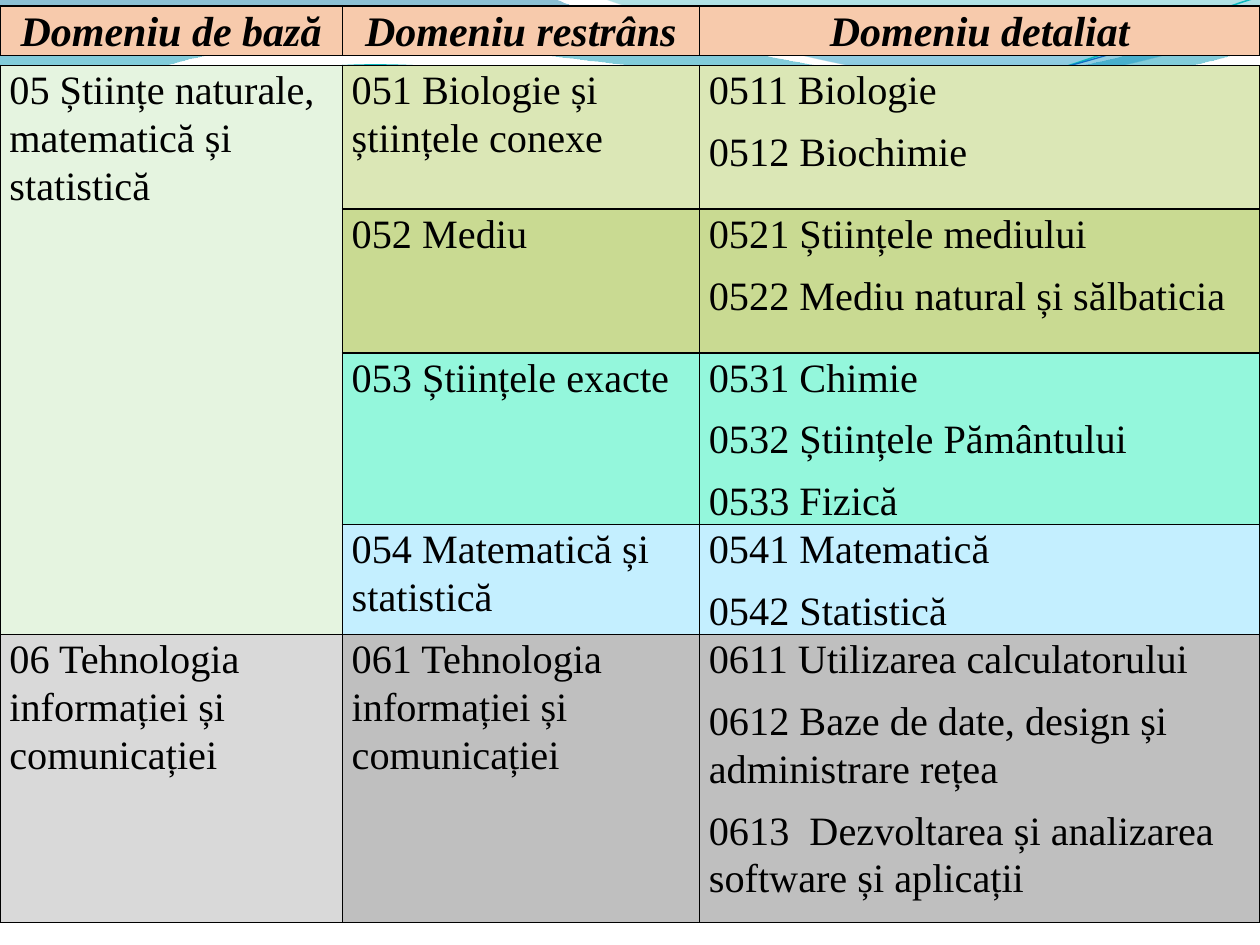
from lxml.etree import SubElement
from pptx import Presentation
from pptx.dml.color import RGBColor
from pptx.enum.text import MSO_ANCHOR, PP_ALIGN
from pptx.oxml.ns import qn
from pptx.util import Cm, Pt

FONT = "Times New Roman"
BLACK = RGBColor(0x00, 0x00, 0x00)
PEACH = RGBColor(0xF7, 0xCA, 0xAC)
MINT = RGBColor(0xE5, 0xF4, 0xE0)
LIME = RGBColor(0xDB, 0xE7, 0xB6)
OLIVE = RGBColor(0xC9, 0xDA, 0x92)
TURQUOISE = RGBColor(0x94, 0xF7, 0xDC)
SKY = RGBColor(0xC4, 0xEF, 0xFF)
LIGHT_GREY = RGBColor(0xD9, 0xD9, 0xD9)
GREY = RGBColor(0xBF, 0xBF, 0xBF)
DEEP_BLUE = RGBColor(0x00, 0x74, 0xA1)
CYAN = RGBColor(0x00, 0xC6, 0xCF)
TEAL = RGBColor(0x00, 0xA1, 0xA9)
BLUE = RGBColor(0x00, 0x8B, 0xBF)
LINE_TEAL = RGBColor(0x0A, 0xB8, 0xBF)
LINE_BLUE = RGBColor(0x0F, 0x6F, 0xC6)

COLUMN_WIDTHS = [6.9, 7.2, 11.3]
HEADINGS = ["Domeniu de bază", "Domeniu restrâns", "Domeniu detaliat"]
HEADER_ROW = (0.94, [([heading], PEACH, "LRTB") for heading in HEADINGS])

DOMAIN_ROWS = [
    (2.79, [
        (["05 Științe naturale, matematică și statistică"], MINT, "LRT"),
        (["051 Biologie și științele conexe"], LIME, "LRTB"),
        (["0511 Biologie", "0512 Biochimie"], LIME, "LRTB"),
    ]),
    (2.9, [
        ([], MINT, "LR"),
        (["052 Mediu"], OLIVE, "LRTB"),
        (["0521 Științele mediului", "0522 Mediu natural și sălbaticia"], OLIVE, "LRTB"),
    ]),
    (3.33, [
        ([], MINT, "LR"),
        (["053 Științele exacte"], TURQUOISE, "LRTB"),
        (["0531 Chimie", "0532 Științele Pământului", "0533 Fizică"], TURQUOISE, "LRTB"),
    ]),
    (2.08, [
        ([], MINT, "LRB"),
        (["054 Matematică și statistică"], SKY, "LRTB"),
        (["0541 Matematică", "0542 Statistică"], SKY, "LRTB"),
    ]),
    (5.81, [
        (["06 Tehnologia informației și comunicației"], LIGHT_GREY, "LRTB"),
        (["061 Tehnologia informației și comunicației"], GREY, "LRTB"),
        (["0611 Utilizarea calculatorului",
          "0612 Baze de date, design și administrare rețea",
          "0613  Dezvoltarea și analizarea software și aplicații"], GREY, "LRTB"),
    ]),
]

WAVES = [
    ([(0, 0), (4.4, -0.01), (4.76, 0.17, 6.64, 0.63, 7.58, 0.63),
      (8.53, 0.63, 9.58, 0.26, 10, 0.09), (10.01, 0.36),
      (9.83, 0.44, 8.7, 0.76, 7.46, 0.75), (6.22, 0.75, 3.82, 0.28, 2.57, 0.34),
      (1.29, 0.36, 0.46, 0.83, -0.01, 1.13)],
     [(0, DEEP_BLUE, 45), (1, CYAN, 55)]),
    ([(4.79, -0.01), (5.09, 0.11, 6.82, 0.62, 7.69, 0.65),
      (8.56, 0.69, 9.61, 0.32, 10, 0.21), (10, 0)],
     [(0, TEAL, 30), (0.8, BLUE, 45)]),
]
WAVE_LINES = [
    ([(0, 1.11), (0.48, 0.93, 1.58, 0.57, 2.77, 0.52),
      (3.95, 0.47, 5.93, 0.89, 7.13, 0.8), (8.33, 0.71, 9.38, 0.15, 9.98, -0.02)],
     LINE_TEAL, 0.85),
    ([(0, 1.04), (0.47, 0.96, 1.64, 0.61, 2.83, 0.56),
      (4.03, 0.51, 5.97, 0.84, 7.17, 0.75), (8.36, 0.67, 9.41, 0.21, 10, 0.06)],
     LINE_BLUE, 0.75),
]


def to_length(inches):
    return Cm(2.54 * inches)


def add_outline(slide, steps, close):
    anchors = [tuple(to_length(value) for value in step[-2:]) for step in steps]
    builder = slide.shapes.build_freeform(*anchors[0])
    builder.add_line_segments(anchors[1:], close=close)
    shape = builder.convert_to_shape()
    shape.shadow.inherit = False
    segments = list(shape._element.iter(qn("a:lnTo")))
    for segment, step in zip(segments, steps[1:]):
        if len(step) == 6:
            curve = segment.getparent().makeelement(qn("a:cubicBezTo"))
            for x, y in zip(step[::2], step[1::2]):
                SubElement(curve, qn("a:pt"), x=str(to_length(x) - shape.left),
                           y=str(to_length(y) - shape.top))
            segment.getparent().replace(segment, curve)
    return shape


def add_wave(slide, steps, stops):
    wave = add_outline(slide, steps, True)
    wave.line.fill.background()
    wave.fill.gradient()
    wave.fill.gradient_angle = 270
    for stop, (position, color, opacity) in zip(wave.fill.gradient_stops, stops):
        stop.position = position
        stop.color.rgb = color
    colors = wave._element.spPr.findall(".//" + qn("a:gs") + "/" + qn("a:srgbClr"))
    for element, (position, color, opacity) in zip(colors, stops):
        SubElement(element, qn("a:alpha"), val=str(opacity * 1000))


def add_wave_line(slide, steps, color, width):
    curve = add_outline(slide, steps, False)
    curve.fill.background()
    curve.line.color.rgb = color
    curve.line.width = Pt(width)


def set_borders(cell, sides):
    properties = cell._tc.get_or_add_tcPr()
    for side in "LRTB":
        border = SubElement(properties, qn("a:ln" + side), w=str(Pt(1)))
        if side in sides:
            fill = SubElement(border, qn("a:solidFill"))
            SubElement(fill, qn("a:srgbClr"), val=str(BLACK))
        else:
            SubElement(border, qn("a:noFill"))


def fill_cell(cell, texts, color, sides, size, heading):
    set_borders(cell, sides)
    cell.fill.solid()
    cell.fill.fore_color.rgb = color
    cell.margin_left = cell.margin_right = Cm(0.19)
    cell.margin_top = cell.margin_bottom = 0
    cell.vertical_anchor = MSO_ANCHOR.TOP
    frame = cell.text_frame
    for index, text in enumerate(texts):
        para = frame.add_paragraph() if index else frame.paragraphs[0]
        para.alignment = PP_ALIGN.CENTER if heading else PP_ALIGN.LEFT
        para.line_spacing = 1.07
        para.space_after = Pt(8)
        span = para.add_run()
        span.text = text
        span.font.name = FONT
        span.font.size = Pt(size)
        span.font.bold = span.font.italic = heading
        span.font.color.rgb = BLACK


def add_domain_table(slide, top, height, rows, size, heading=False):
    frame = slide.shapes.add_table(len(rows), len(COLUMN_WIDTHS), 0, Cm(top),
                                   Cm(sum(COLUMN_WIDTHS)), Cm(height))
    table = frame.table
    table.first_row = table.horz_banding = False
    for column, width in zip(table.columns, COLUMN_WIDTHS):
        column.width = Cm(width)
    for row, (row_height, cells) in zip(table.rows, rows):
        row.height = Cm(row_height)
        for cell, (texts, color, sides) in zip(row.cells, cells):
            fill_cell(cell, texts, color, sides, size, heading)
    frame.height = Cm(height)


def main():
    deck = Presentation()
    deck.slide_width, deck.slide_height = Cm(25.4), Cm(19.05)
    page = deck.slides.add_slide(deck.slide_layouts[6])
    for steps, stops in WAVES:
        add_wave(page, steps, stops)
    for steps, color, width in WAVE_LINES:
        add_wave_line(page, steps, color, width)
    add_domain_table(page, 0.12, 1.09, [HEADER_ROW], 24, heading=True)
    add_domain_table(page, 1.32, 17.73, DOMAIN_ROWS, 23)
    deck.save("out.pptx")


if __name__ == "__main__":
    main()
